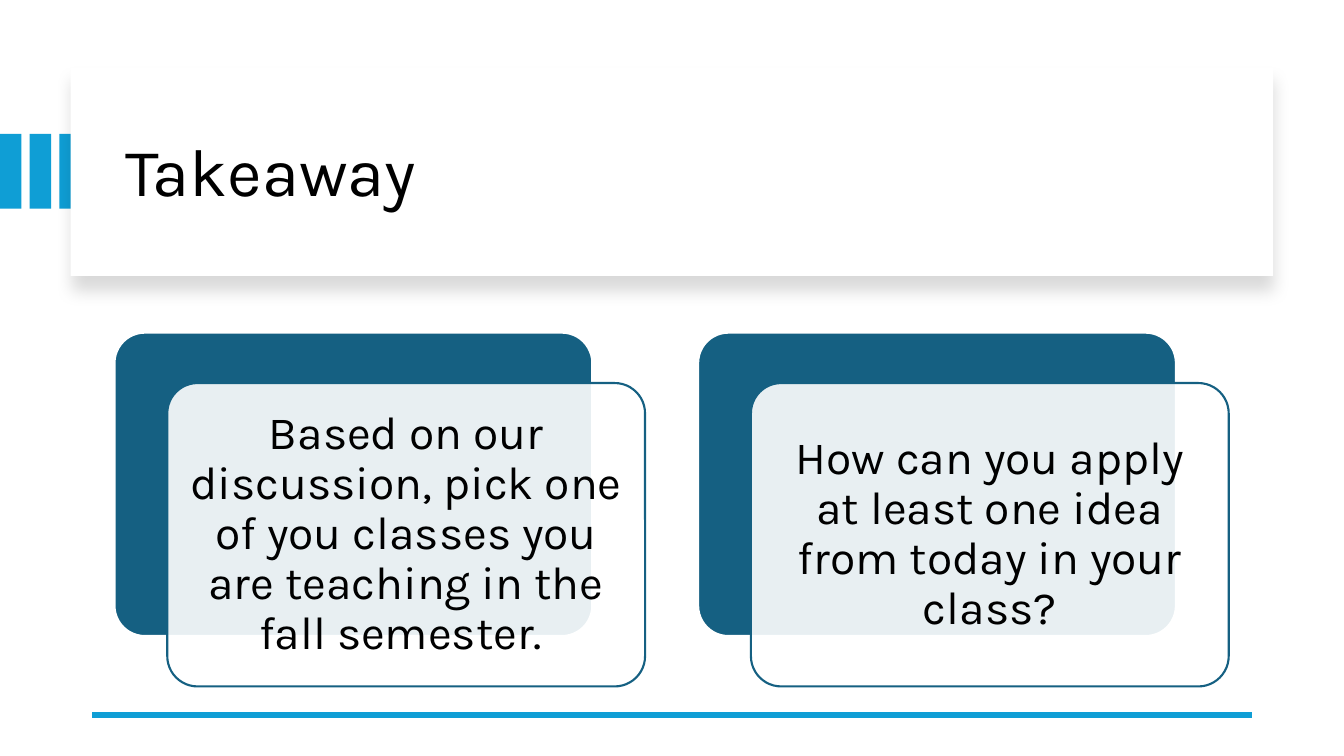
from lxml import etree
from pptx import Presentation
from pptx.dml import color
from pptx.enum import shapes, text
from pptx.oxml import ns
from pptx.util import Pt

FONT = "Karla"
BLACK = "000000"
WHITE = "FFFFFF"
SKY = "0F9ED5"
TEAL = "156082"
PROMPTS = [
    "Based on our discussion, pick one of you classes you are teaching in the fall semester. ",
    "How can you apply at least one idea from today in your class?",
]


def rgb(value):
    return color.RGBColor.from_string(value)


def add_child(parent, tag, **attributes):
    return etree.SubElement(parent, ns.qn(tag), attributes)


def set_alpha(color_element, percent):
    add_child(color_element, "a:alpha", val=str(percent * 1000))


def add_block(slide, kind, box, fill, line=None, opacity=100):
    shape = slide.shapes.add_shape(kind, *map(Pt, box))
    shape.shadow.inherit = False
    shape.fill.solid()
    shape.fill.fore_color.rgb = rgb(fill)
    if opacity < 100:
        fill_element = shape._element.spPr.find(ns.qn("a:solidFill"))
        set_alpha(fill_element[0], opacity)
    if line:
        shape.line.color.rgb = rgb(line)
        shape.line.width = Pt(1.5)
    else:
        shape.line.fill.background()
    return shape


def add_drop_shadow(shape, blur, distance, opacity):
    effects = shape._element.spPr.find(ns.qn("a:effectLst"))
    shadow = add_child(
        effects, "a:outerShdw", blurRad=str(Pt(blur)), dist=str(Pt(distance)),
        dir="5400000", algn="t", rotWithShape="0",
    )
    set_alpha(add_child(shadow, "a:srgbClr", val=BLACK), opacity)


def add_label(slide, box, content, size, alignment, inset_x, inset_y):
    frame = slide.shapes.add_textbox(*map(Pt, box)).text_frame
    frame.word_wrap = True
    frame.vertical_anchor = text.MSO_ANCHOR.MIDDLE
    frame.margin_left = frame.margin_right = Pt(inset_x)
    frame.margin_top = frame.margin_bottom = Pt(inset_y)
    paragraph = frame.paragraphs[0]
    paragraph.alignment = alignment
    paragraph.line_spacing = 0.9
    run = paragraph.add_run()
    run.text = content
    run.font.name = FONT
    run.font.size = Pt(size)
    run.font.color.rgb = rgb(BLACK)


def add_rule(slide, start_x, end_x, y):
    rule = slide.shapes.add_connector(
        shapes.MSO_CONNECTOR.STRAIGHT, Pt(start_x), Pt(y), Pt(end_x), Pt(y))
    rule.line.color.rgb = rgb(SKY)
    rule.line.width = Pt(4.5)
    add_child(rule._element.spPr, "a:effectLst")


def add_card(slide, left, top, content):
    width, height, inset = 341.3, 216.7, 6.5
    front_left, front_top = left + 37.7, top + 36
    rounded = shapes.MSO_SHAPE.ROUNDED_RECTANGLE
    back = add_block(slide, rounded, (left, top, width, height), TEAL, WHITE)
    front = add_block(
        slide, rounded, (front_left, front_top, width, height), WHITE, TEAL, opacity=90)
    for shape in (back, front):
        shape.adjustments[0] = 0.1
    label_box = (front_left + inset, front_top + inset,
                 width - 2 * inset, height - 2 * inset)
    add_label(slide, label_box, content, 33, text.PP_ALIGN.CENTER, 9, 10)


def main():
    presentation = Presentation()
    presentation.slide_width = Pt(960)
    presentation.slide_height = Pt(540)
    slide = presentation.slides.add_slide(presentation.slide_layouts[6])
    rectangle = shapes.MSO_SHAPE.RECTANGLE

    for index in range(3):
        add_block(slide, rectangle, (index * 21.2, 95.7, 15.3, 53.3), SKY)
    panel = add_block(slide, rectangle, (50.4, 48.2, 859, 149), WHITE)
    add_drop_shadow(panel, blur=11, distance=10, opacity=15)
    add_label(slide, (82.4, 63.4, 801.4, 122.4), "Takeaway", 48,
              text.PP_ALIGN.LEFT, 7.2, 3.6)
    add_rule(slide, 66, 894.2, 510.5)
    for index, prompt in enumerate(PROMPTS):
        add_card(slide, 81.8 + index * 416.9, 237.6, prompt)

    presentation.save("out.pptx")


if __name__ == "__main__":
    main()
